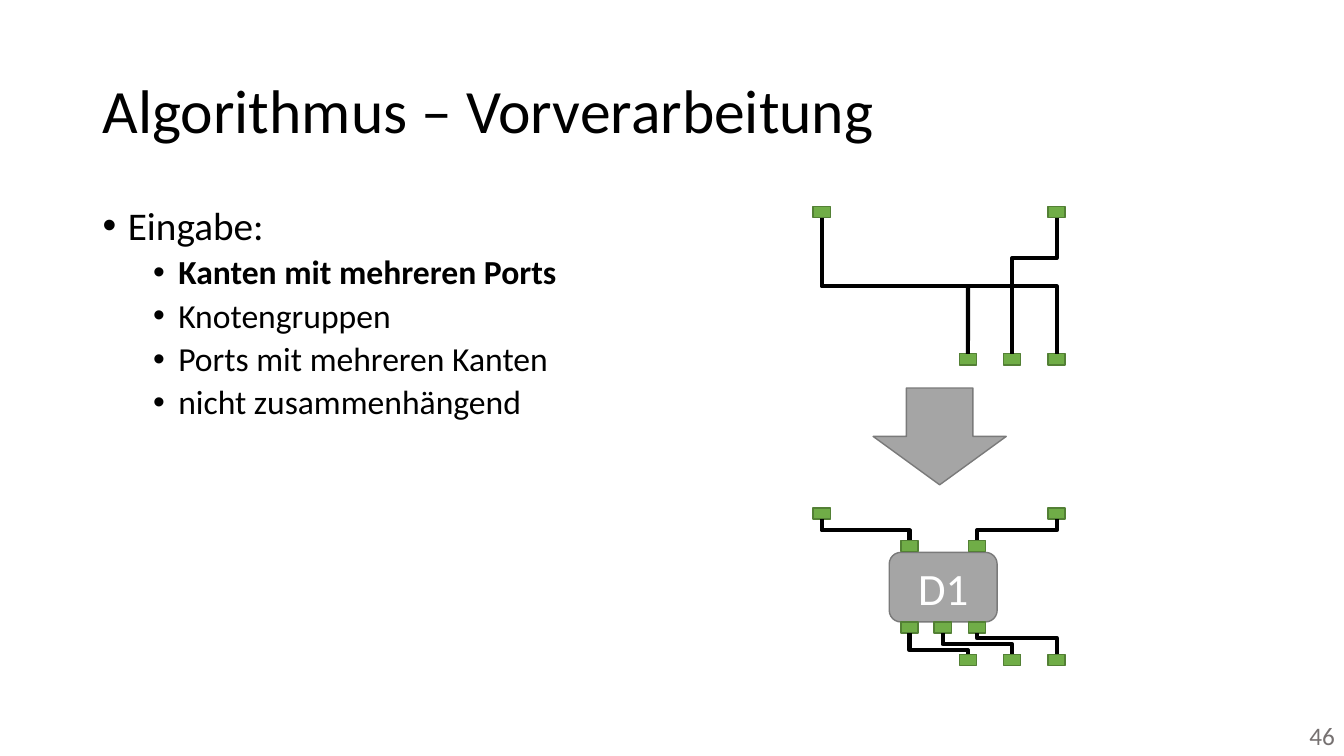
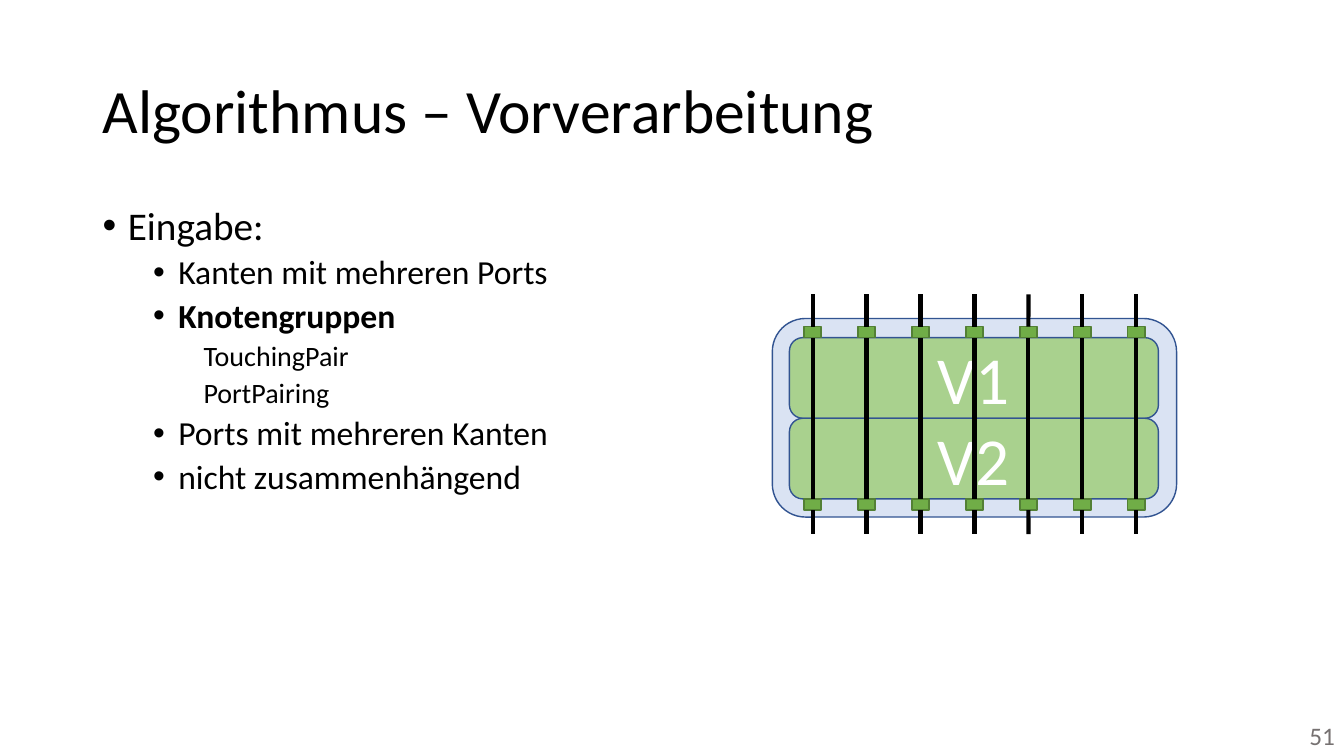
from lxml import etree
from pptx import Presentation
from pptx.dml.color import RGBColor
from pptx.enum.shapes import MSO_CONNECTOR, MSO_SHAPE
from pptx.enum.text import MSO_ANCHOR, PP_ALIGN
from pptx.oxml.ns import qn
from pptx.util import Inches, Pt

RECTANGLE = MSO_SHAPE.RECTANGLE
ROUNDED = MSO_SHAPE.ROUNDED_RECTANGLE
DOWN_ARROW = MSO_SHAPE.DOWN_ARROW
STRAIGHT = MSO_CONNECTOR.STRAIGHT
ELBOW = MSO_CONNECTOR.ELBOW
TOP_SIDE, BOTTOM_SIDE = 0, 2
LEFT, CENTER, RIGHT = PP_ALIGN.LEFT, PP_ALIGN.CENTER, PP_ALIGN.RIGHT
ANCHOR_TOP, ANCHOR_MIDDLE = MSO_ANCHOR.TOP, MSO_ANCHOR.MIDDLE

FONT = "Calibri"
BLACK, WHITE, NUMBER_GRAY = "000000", "FFFFFF", "767171"
GRAY, GRAY_LINE = "A5A5A5", "7A7A7A"
PORT_GREEN, PORT_LINE = "70AD47", "538035"
NODE_GREEN, GROUP_BLUE, NODE_LINE = "A9D18E", "DAE3F3", "325491"
PORT_WIDTH, PORT_HEIGHT = 0.17, 0.11

LEVELS = [
    {"size": 28, "margin": 0.25, "indent": -0.25, "before": 10},
    {"size": 24, "margin": 0.75, "indent": -0.25, "before": 5},
    {"size": 20, "margin": 1, "indent": 0, "before": 5},
]


def color(hex_string):
    """Turn a hex string into a colour."""
    return RGBColor.from_string(hex_string)


def write(paragraph, text, size=18, ink=BLACK, bold=False, align=LEFT, spacing=None):
    """Put formatted text into a paragraph."""
    paragraph.alignment = align
    paragraph.line_spacing = spacing
    run = paragraph.add_run()
    run.text = text
    run.font.name = FONT
    run.font.size = Pt(size)
    run.font.bold = bold
    run.font.color.rgb = color(ink)


def add_frame(slide, left, top, width, height, anchor=ANCHOR_TOP, wrap=True):
    """Add a text box and return its text frame."""
    box = slide.shapes.add_textbox(Inches(left), Inches(top), Inches(width), Inches(height))
    frame = box.text_frame
    frame.word_wrap = wrap
    frame.vertical_anchor = anchor
    return frame


def add_bullet(paragraph, text, level, bold):
    """Write one list entry in the style of its level."""
    style = LEVELS[level]
    write(paragraph, text, size=style["size"], bold=bold, spacing=0.9)
    paragraph.space_before = Pt(style["before"])
    properties = paragraph._p.get_or_add_pPr()
    properties.set("marL", str(Inches(style["margin"])))
    properties.set("indent", str(Inches(style["indent"])))
    if style["indent"]:
        etree.SubElement(properties, qn("a:buFont")).set("typeface", "Arial")
        etree.SubElement(properties, qn("a:buChar")).set("char", "•")


def add_page(presentation, number, topics):
    """Add a slide with title, topic list and page number."""
    slide = presentation.slides.add_slide(presentation.slide_layouts[6])
    title = add_frame(slide, 0.92, 0.4, 11.5, 1.45, anchor=ANCHOR_MIDDLE)
    write(title.paragraphs[0], "Algorithmus – Vorverarbeitung", size=44, spacing=0.9)
    body = add_frame(slide, 0.92, 2, 5.65, 4.76)
    add_bullet(body.paragraphs[0], "Eingabe:", 0, False)
    for text, level, bold in topics:
        add_bullet(body.add_paragraph(), text, level, bold)
    footer = add_frame(slide, 12.88, 7.1, 0.46, 0.4, wrap=False)
    write(footer.paragraphs[0], number, ink=NUMBER_GRAY, align=RIGHT)
    return slide


def add_block(slide, kind, left, top, width, height, fill, outline, text="", size=18):
    """Add a filled and outlined shape with an optional centred label."""
    shape = slide.shapes.add_shape(
        kind, Inches(left), Inches(top), Inches(width), Inches(height))
    shape.shadow.inherit = False
    shape.fill.solid()
    shape.fill.fore_color.rgb = color(fill)
    shape.line.color.rgb = color(outline)
    shape.line.width = Pt(1)
    if text:
        shape.text_frame.vertical_anchor = ANCHOR_MIDDLE
        write(shape.text_frame.paragraphs[0], text, size=size, ink=WHITE, align=CENTER)
    return shape


def add_ports(slide, top, centers):
    """Add a row of ports around the given centres."""
    return [
        add_block(slide, RECTANGLE, center - PORT_WIDTH / 2, top,
                  PORT_WIDTH, PORT_HEIGHT, PORT_GREEN, PORT_LINE)
        for center in centers
    ]


def add_edge(slide, kind, start_x, start_y, end_x, end_y):
    """Add a thick black connector without shadow."""
    edge = slide.shapes.add_connector(
        kind, Inches(start_x), Inches(start_y), Inches(end_x), Inches(end_y))
    edge.line.color.rgb = color(BLACK)
    edge.line.width = Pt(3)
    etree.SubElement(edge._element.spPr, qn("a:effectLst"))
    return edge


def add_bent_edge(slide, top, bottom, bend_y):
    """Add a vertical elbow from top to bottom that turns at bend_y."""
    (top_x, top_y), (bottom_x, bottom_y) = top, bottom
    middle_x, middle_y = (top_x + bottom_x) / 2, (top_y + bottom_y) / 2
    half_run, half_drop = (bottom_x - top_x) / 2, (bottom_y - top_y) / 2
    edge = add_edge(slide, ELBOW, middle_x - half_drop, middle_y + half_run,
                    middle_x + half_drop, middle_y - half_run)
    properties = edge._element.spPr
    properties.find(qn("a:xfrm")).set("rot", str(90 * 60000))
    geometry = properties.find(qn("a:prstGeom"))
    values = geometry.find(qn("a:avLst"))
    if values is None:
        values = etree.SubElement(geometry, qn("a:avLst"))
    share = round((bend_y - top_y) / (bottom_y - top_y) * 100000)
    guide = etree.SubElement(values, qn("a:gd"))
    guide.set("name", "adj1")
    guide.set("fmla", f"val {share}")


def draw_port_edges(slide):
    """Draw edges with several ports and their replacement by a node."""
    upper_centers, lower_centers = [8.15, 10.48], [9.6, 10.04, 10.48]
    add_block(slide, DOWN_ARROW, 8.66, 3.85, 1.32, 0.96, GRAY, GRAY_LINE)
    add_block(slide, ROUNDED, 8.82, 5.48, 1.07, 0.69, GRAY, GRAY_LINE, "D1", 32)
    for top in (2.05, 5.04):
        add_ports(slide, top, upper_centers)
    branch_port = add_ports(slide, 3.51, lower_centers)[0]
    add_ports(slide, 6.49, lower_centers)
    add_ports(slide, 5.36, [9.02, 9.69])
    add_ports(slide, 6.17, [9.02, 9.35, 9.69])

    branch = add_edge(slide, STRAIGHT, 9.6, 3.51, 9.6, 2.84)
    branch.begin_connect(branch_port, TOP_SIDE)
    bends = [
        ((8.15, 2.16), (10.48, 3.51), 2.84),
        ((10.48, 2.16), (10.04, 3.51), 2.56),
        ((8.15, 5.15), (9.02, 5.36), 5.26),
        ((10.48, 5.15), (9.69, 5.36), 5.26),
        ((9.02, 6.28), (9.6, 6.49), 6.45),
        ((9.35, 6.28), (10.04, 6.49), 6.39),
        ((9.69, 6.28), (10.48, 6.49), 6.33),
    ]
    for top, bottom, bend_y in bends:
        add_bent_edge(slide, top, bottom, bend_y)


def draw_node_group(slide):
    """Draw two touching nodes whose ports are paired by edges."""
    add_block(slide, ROUNDED, 7.66, 3.16, 4.01, 1.97, GROUP_BLUE, NODE_LINE)
    for row, name in enumerate(("V1", "V2")):
        add_block(slide, ROUNDED, 7.83, 3.35 + 0.8 * row, 3.66, 0.8,
                  NODE_GREEN, NODE_LINE, name, 48)
    first, last, count = 8.06, 11.27, 7
    centers = [first + (last - first) * index / (count - 1) for index in range(count)]
    upper_ports = add_ports(slide, 3.24, centers)
    lower_ports = add_ports(slide, 4.95, centers)
    for center, upper, lower in zip(centers, upper_ports, lower_ports):
        add_edge(slide, STRAIGHT, center, 3.24, center, 2.92).begin_connect(upper, TOP_SIDE)
        add_edge(slide, STRAIGHT, center, 5.06, center, 5.3).begin_connect(lower, BOTTOM_SIDE)
        pairing = add_edge(slide, STRAIGHT, center, 4.95, center, 3.35)
        pairing.begin_connect(lower, TOP_SIDE)
        pairing.end_connect(upper, BOTTOM_SIDE)


def main():
    """Build and save the presentation."""
    presentation = Presentation()
    presentation.slide_width = Inches(13.33)
    presentation.slide_height = Inches(7.5)
    draw_port_edges(add_page(presentation, "46", [
        ("Kanten mit mehreren Ports", 1, True),
        ("Knotengruppen", 1, False),
        ("Ports mit mehreren Kanten", 1, False),
        ("nicht zusammenhängend", 1, False),
    ]))
    draw_node_group(add_page(presentation, "51", [
        ("Kanten mit mehreren Ports", 1, False),
        ("Knotengruppen", 1, True),
        ("TouchingPair", 2, False),
        ("PortPairing", 2, False),
        ("Ports mit mehreren Kanten", 1, False),
        ("nicht zusammenhängend", 1, False),
    ]))
    presentation.save("out.pptx")


if __name__ == "__main__":
    main()
